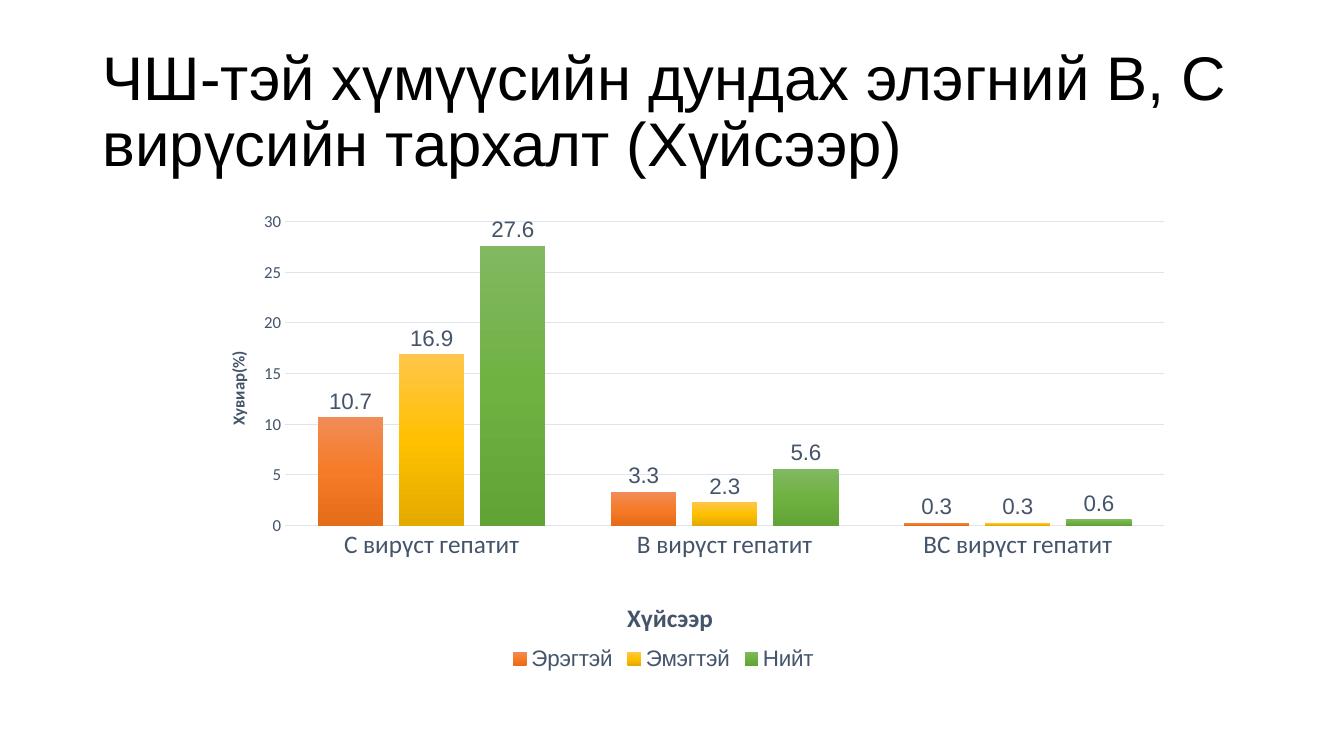
from copy import deepcopy

from lxml import etree
from pptx import Presentation
from pptx.chart.data import CategoryChartData
from pptx.dml.color import RGBColor
from pptx.enum.chart import XL_CHART_TYPE, XL_LABEL_POSITION, XL_LEGEND_POSITION, XL_TICK_MARK
from pptx.enum.text import MSO_ANCHOR, MSO_AUTO_SIZE, PP_ALIGN
from pptx.oxml.ns import qn
from pptx.util import Inches, Pt

COLORS = {"title": "000000", "text": "44546A", "grid": "E0E5EB"}
CATEGORIES = ["С вирүст гепатит", "B вирүст гепатит", "BC вирүст гепатит"]
# Name, values, gradient from top to bottom
SERIES = [
    ("Эрэгтэй", (10.7, 3.3, 0.3), ("F18C57", "F67B28", "E56C19")),
    ("Эмэгтэй", (16.9, 2.3, 0.3), ("FFC64B", "FFC000", "E3AB00")),
    ("Нийт", (27.6, 5.6, 0.6), ("81B861", "6FB242", "62A336")),
]


def set_font(font, size, name="Calibri", color="text", bold=False):
    font.size, font.name, font.bold = Pt(size), name, bold
    font.color.rgb = RGBColor.from_string(COLORS[color])


def set_line(line):
    line.color.rgb = RGBColor.from_string(COLORS["grid"])
    line.width = Pt(0.75)


def set_layout(parent, index, **values):
    """Place a chart part by fractions of the chart area."""
    for old in parent.findall(qn("c:layout")):
        parent.remove(old)
    layout = etree.Element(qn("c:layout"))
    manual = etree.SubElement(layout, qn("c:manualLayout"))
    for key, value in values.items():
        etree.SubElement(manual, qn(f"c:{key}"), val=str(value))
    parent.insert(index, layout)


def set_axis_title(axis, text, size, x, y):
    tf = axis.axis_title.text_frame
    tf.text = text
    set_font(tf.paragraphs[0].runs[0].font, size, bold=True)
    set_layout(axis.axis_title._element, 1, xMode="edge", yMode="edge", x=x, y=y)
    return tf


def fill_gradient(series, colors):
    fill = series.format.fill
    fill.gradient()
    fill.gradient_angle = 270
    stops = series._element.find(".//" + qn("a:gsLst"))
    stops.append(deepcopy(stops[0]))
    for i, (stop, color) in enumerate(zip(fill.gradient_stops, colors)):
        stop.position = i / 2
        stop.color.rgb = RGBColor.from_string(color)


def add_title(slide, text, left, top, width, height):
    sp = slide.shapes.title
    sp.left, sp.top, sp.width, sp.height = left, top, width, height
    tf = sp.text_frame
    tf.text = text
    tf.word_wrap = True
    tf.auto_size = MSO_AUTO_SIZE.NONE
    tf.vertical_anchor = MSO_ANCHOR.MIDDLE
    p = tf.paragraphs[0]
    p.alignment, p.line_spacing = PP_ALIGN.LEFT, 0.9
    set_font(p.runs[0].font, 44, "Arial", "title")


def add_prevalence_chart(slide, left, top, width, height):
    data = CategoryChartData()
    data.categories = CATEGORIES
    for name, values, _ in SERIES:
        data.add_series(name, values)
    chart = slide.shapes.add_chart(
        XL_CHART_TYPE.COLUMN_CLUSTERED, left, top, width, height, data).chart
    chart.has_title = False
    set_font(chart.font, 10)

    # Columns and their labels
    plot = chart.plots[0]
    plot.gap_width, plot.overlap, plot.vary_by_categories = 100, -24, False
    for series, (_, _, colors) in zip(plot.series, SERIES):
        fill_gradient(series, colors)
        labels = series.data_labels
        labels.show_value = True
        labels.position = XL_LABEL_POSITION.OUTSIDE_END
        set_font(labels.font, 16, "Arial")
    plot_area = chart._chartSpace.find(".//" + qn("c:plotArea"))
    set_layout(plot_area, 0, layoutTarget="inner", xMode="edge", yMode="edge",
               x=0.13, y=0.03, w=0.86, h=0.65)

    # Axes
    cat, val = chart.category_axis, chart.value_axis
    for axis, size in ((cat, 18), (val, 12)):
        axis.major_tick_mark = axis.minor_tick_mark = XL_TICK_MARK.NONE
        set_font(axis.tick_labels.font, size)
    set_line(cat.format.line)
    val.format.line.fill.background()
    val.minimum_scale, val.maximum_scale, val.major_unit = 0, 30, 5
    set_line(val.major_gridlines.format.line)
    set_axis_title(cat, "Хүйсээр", 18, 0.46, 0.83)
    tf = set_axis_title(val, "Хувиар(%)", 12, 0.07, 0.3)
    body = tf._txBody.find(qn("a:bodyPr"))
    body.set("rot", "-5400000")
    body.set("vert", "horz")

    # Legend
    chart.has_legend = True
    chart.legend.position = XL_LEGEND_POSITION.BOTTOM
    chart.legend.include_in_layout = False
    set_font(chart.legend.font, 16, "Arial")


def main():
    prs = Presentation()
    prs.slide_width, prs.slide_height = Inches(13.33), Inches(7.5)
    slide = prs.slides.add_slide(prs.slide_layouts[5])
    for sp in list(slide.placeholders):
        if sp.placeholder_format.idx != 0:
            sp.element.getparent().remove(sp.element)
    add_title(slide, "ЧШ-тэй хүмүүсийн дундах элэгний B, С вирүсийн тархалт (Хүйсээр)",
              Inches(0.92), Inches(0.4), Inches(11.5), Inches(1.45))
    add_prevalence_chart(slide, Inches(1.51), Inches(2.06), Inches(10.14), Inches(4.64))
    prs.save("out.pptx")


if __name__ == "__main__":
    main()
